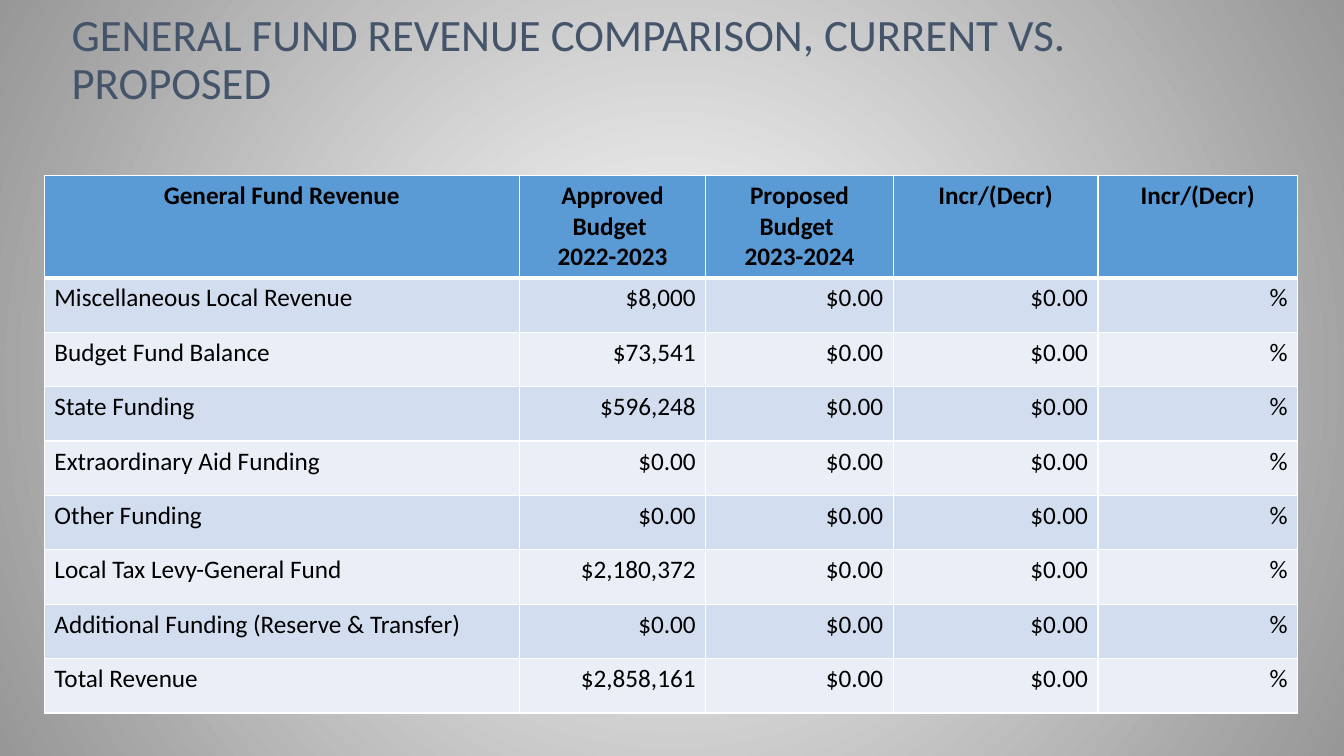
from dataclasses import dataclass

from lxml.etree import SubElement
from pptx import Presentation
from pptx.dml.color import RGBColor
from pptx.enum.text import MSO_ANCHOR, MSO_AUTO_SIZE, PP_ALIGN
from pptx.oxml import parse_xml
from pptx.oxml.ns import nsdecls, qn
from pptx.slide import Slide
from pptx.table import _Cell as Cell
from pptx.text.text import _Paragraph as Paragraph
from pptx.util import Pt

PX = 9144
FONT = "Calibri"
COLORS = {
    "center": "FFFFFF",
    "edge": "979797",
    "title": "44546A",
    "text": "000000",
    "header": "5B9BD5",
    "odd": "D2DEEF",
    "even": "EAEFF7",
    "border": "FFFFFF",
}
TITLE = "GENERAL FUND REVENUE COMPARISON, CURRENT VS. PROPOSED"
HEADINGS = [
    "General Fund Revenue",
    "Approved Budget \n2022-2023",
    "Proposed Budget \n2023-2024",
    "Incr/(Decr)",
    "Incr/(Decr)",
]
COLUMN_WIDTHS = [471, 185, 186, 203, 198]
HEADER_HEIGHT, ROW_HEIGHT = 100, 54


@dataclass(frozen=True)
class Revenue:
    source: str
    approved: str = "$0.00"
    proposed: str = "$0.00"
    change: str = "$0.00"
    percent: str = "%"

    def texts(self) -> list[str]:
        return [self.source, self.approved, self.proposed, self.change, self.percent]


REVENUES = [
    Revenue("Miscellaneous Local Revenue", "$8,000"),
    Revenue("Budget Fund Balance", "$73,541"),
    Revenue("State Funding", "$596,248"),
    Revenue("Extraordinary Aid Funding"),
    Revenue("Other Funding"),
    Revenue("Local Tax Levy-General Fund", "$2,180,372"),
    Revenue("Additional Funding (Reserve & Transfer)"),
    Revenue("Total Revenue", "$2,858,161"),
]


def rgb(name: str) -> RGBColor:
    return RGBColor.from_string(COLORS[name])


def style(p: Paragraph, size: int, color: str, align: PP_ALIGN, bold: bool = False) -> None:
    p.alignment = align
    p.font.name, p.font.size, p.font.bold = FONT, Pt(size), bold
    p.font.color.rgb = rgb(color)


def set_background(s: Slide) -> None:
    fill = s.background.fill
    fill.gradient()
    for stop, position, color in zip(fill.gradient_stops, (0, 1), ("center", "edge")):
        stop.position = position
        stop.color.rgb = rgb(color)
    grad = s.element.find(".//" + qn("a:gradFill"))
    grad.replace(grad.find(qn("a:lin")), parse_xml(
        f'<a:path {nsdecls("a")} path="circle">'
        '<a:fillToRect l="50000" t="50000" r="50000" b="50000"/></a:path>'))


def add_title(s: Slide) -> None:
    sp = s.shapes.title
    sp.left, sp.top, sp.width, sp.height = (n * PX for n in (61, 104, 1168, 9))
    tf = sp.text_frame
    tf.text = TITLE
    tf.word_wrap, tf.auto_size = True, MSO_AUTO_SIZE.NONE
    tf.vertical_anchor = MSO_ANCHOR.BOTTOM
    p = tf.paragraphs[0]
    style(p, 32, "title", PP_ALIGN.LEFT)
    p.line_spacing = 0.9


def set_borders(cell: Cell, top: int, bottom: int) -> None:
    props = cell._tc.get_or_add_tcPr()
    for side, width in (("L", 1), ("R", 1), ("T", top), ("B", bottom)):
        line = SubElement(props, qn(f"a:ln{side}"), w=str(Pt(width)))
        fill = SubElement(line, qn("a:solidFill"))
        SubElement(fill, qn("a:srgbClr"), val=COLORS["border"])


def fill_cell(cell: Cell, text: str, row: int, column: int) -> None:
    header = row == 0
    set_borders(cell, 3 if row == 1 else 1, 3 if header else 1)
    cell.fill.solid()
    cell.fill.fore_color.rgb = rgb("header" if header else "odd" if row % 2 else "even")
    cell.text = text
    align = PP_ALIGN.CENTER if header else PP_ALIGN.RIGHT if column else PP_ALIGN.LEFT
    for p in cell.text_frame.paragraphs:
        style(p, 18, "text", align, header)


def add_revenue_table(s: Slide) -> None:
    rows = [HEADINGS] + [revenue.texts() for revenue in REVENUES]
    height = HEADER_HEIGHT + ROW_HEIGHT * len(REVENUES)
    box = (n * PX for n in (44, 174, sum(COLUMN_WIDTHS), height))
    table = s.shapes.add_table(len(rows), len(COLUMN_WIDTHS), *box).table
    for column, width in zip(table.columns, COLUMN_WIDTHS):
        column.width = width * PX
    for i, texts in enumerate(rows):
        table.rows[i].height = (ROW_HEIGHT if i else HEADER_HEIGHT) * PX
        for j, text in enumerate(texts):
            fill_cell(table.cell(i, j), text, i, j)


def main() -> None:
    prs = Presentation()
    prs.slide_width, prs.slide_height = 1333 * PX, 750 * PX
    s = prs.slides.add_slide(prs.slide_layouts[5])
    set_background(s)
    add_title(s)
    add_revenue_table(s)
    prs.save("out.pptx")


if __name__ == "__main__":
    main()
